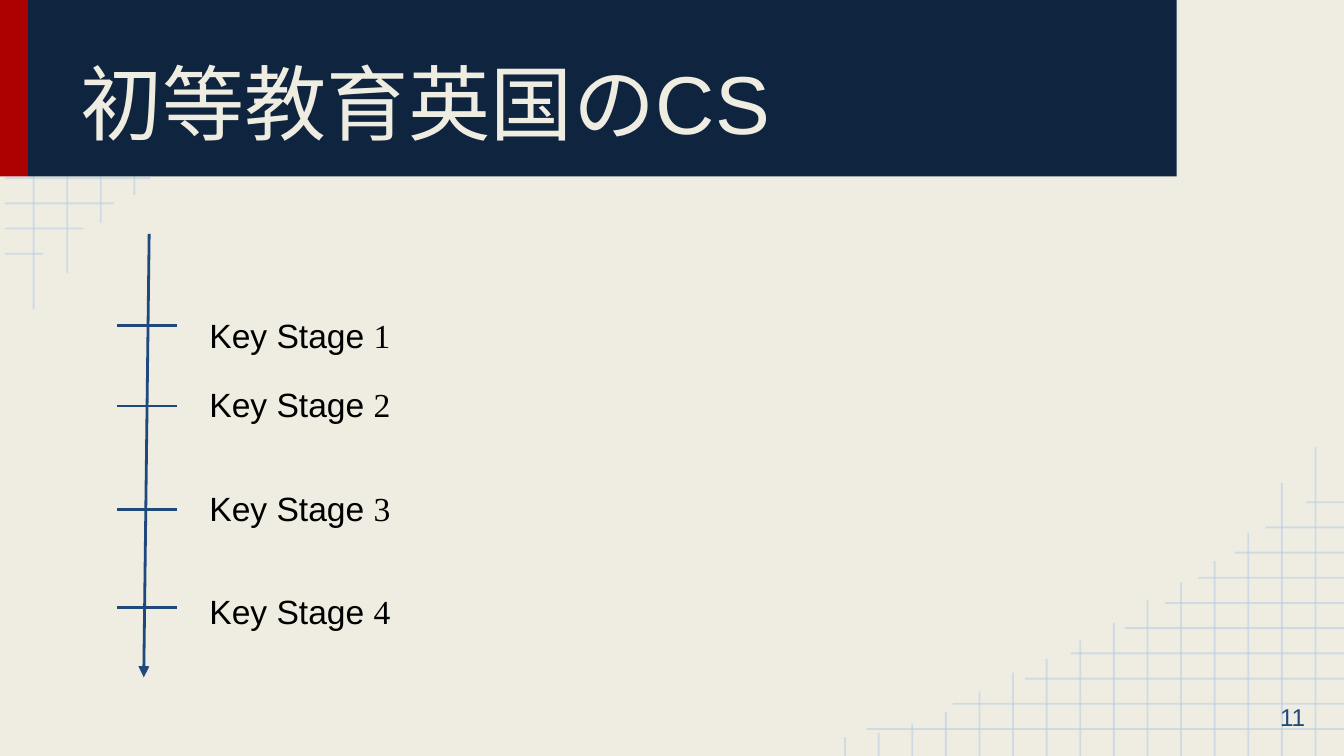
"""Build the slide on Key Stages in English primary computing education."""
from dataclasses import dataclass

from lxml.etree import SubElement
from pptx import Presentation
from pptx.dml.color import RGBColor
from pptx.enum.shapes import MSO_CONNECTOR, MSO_SHAPE
from pptx.enum.text import MSO_ANCHOR, PP_ALIGN
from pptx.oxml.ns import qn
from pptx.util import Inches, Pt


@dataclass(frozen=True)
class Theme:
    paper: RGBColor = RGBColor.from_string("EFEDE2")
    grid: RGBColor = RGBColor.from_string("B7CCE4")
    red: RGBColor = RGBColor.from_string("AB0101")
    navy: RGBColor = RGBColor.from_string("0F243E")
    blue: RGBColor = RGBColor.from_string("1F497D")
    black: RGBColor = RGBColor.from_string("000000")
    font: str = "Arial"
    digit_font: str = "Times New Roman"
    title_size: int = 44
    label_size: int = 18
    number_size: int = 13


theme = Theme()
presentation = Presentation()
presentation.slide_width = Inches(10)
presentation.slide_height = Inches(5.625)
column = presentation.slide_width / 40
row = presentation.slide_height / 30
slide = presentation.slides.add_slide(presentation.slide_layouts[6])
slide.background.fill.solid()
slide.background.fill.fore_color.rgb = theme.paper


def add_line(x1, y1, x2, y2, color, width):
    connector = slide.shapes.add_connector(
        MSO_CONNECTOR.STRAIGHT,
        round(x1 * column), round(y1 * row), round(x2 * column), round(y2 * row))
    connector.line.color.rgb = color
    connector.line.width = Pt(width)
    SubElement(connector._element.spPr, qn("a:effectLst"))
    return connector


def add_text(text, x, y, width, height, size, color, anchor=MSO_ANCHOR.TOP):
    box = slide.shapes.add_textbox(
        round(x * column), round(y * row), round(width * column), round(height * row))
    frame = box.text_frame
    frame.word_wrap = True
    frame.vertical_anchor = anchor
    frame.margin_left = frame.margin_right = Inches(0.1)
    frame.margin_top = frame.margin_bottom = Inches(0.1)
    paragraph = frame.paragraphs[0]
    paragraph.add_run().text = text
    paragraph.font.name = theme.font
    paragraph.font.size = Pt(size)
    paragraph.font.color.rgb = color
    return paragraph


row_ends = [14.36, 11.8, 9.64, 8.28, 6.68, 5.48, 4.48, 3.4, 2.48, 1.28]
column_ends = [12.27, 10.83, 8.85, 7.73, 6.88, 6.19, 5.28, 4.59,
               3.84, 3.31, 2.56, 1.76, 1.28, 0.91, 0.75]
grid_lines = [(0.15, y + 0.07, end, y + 0.07) for y, end in enumerate(row_ends, 1)]
grid_lines += [(x, end, x, 0) for x, end in enumerate(column_ends, 1)]
mirrored_lines = [(40.15 - x1, 30 - y1, 40.15 - x2, 30 - y2)
                  for x1, y1, x2, y2 in grid_lines]
for ends in grid_lines + mirrored_lines:
    grid_line = add_line(*ends, theme.grid, 1)
    color_element = grid_line._element.spPr.find(".//" + qn("a:srgbClr"))
    SubElement(color_element, qn("a:alpha"), val="54000")

for left, width, color in [(0, 0.84, theme.red), (0.84, 34.18, theme.navy)]:
    band = slide.shapes.add_shape(
        MSO_SHAPE.RECTANGLE, round(left * column), 0, round(width * column), round(7 * row))
    band.shadow.inherit = False
    band.fill.solid()
    band.fill.fore_color.rgb = color
    band.line.fill.background()

add_text("初等教育英国のCS", 2, 0.59, 32, 5.92,
         theme.title_size, theme.paper, MSO_ANCHOR.BOTTOM)
page_number = add_text("11", 36.84, 26.93, 2.4, 3.04,
                       theme.number_size, theme.blue, MSO_ANCHOR.MIDDLE)
page_number.alignment = PP_ALIGN.RIGHT

timeline = add_line(4.44, 9.28, 4.28, 26.88, theme.blue, 1.5)
SubElement(timeline.line._get_or_add_ln(), qn("a:tailEnd"), type="triangle")

stages = [(12.91, 11.95), (16.11, 14.72), (20.21, 18.83), (24.11, 22.93)]
for stage, (tick, label_top) in enumerate(stages, 1):
    add_line(3.48, tick, 5.28, tick, theme.blue, 1.5)
    label = add_text("Key Stage ", 5.84, label_top, 6.8, 2.77,
                     theme.label_size, theme.black)
    digit = label.add_run()
    digit.text = str(stage)
    digit.font.name = theme.digit_font

presentation.save("out.pptx")
